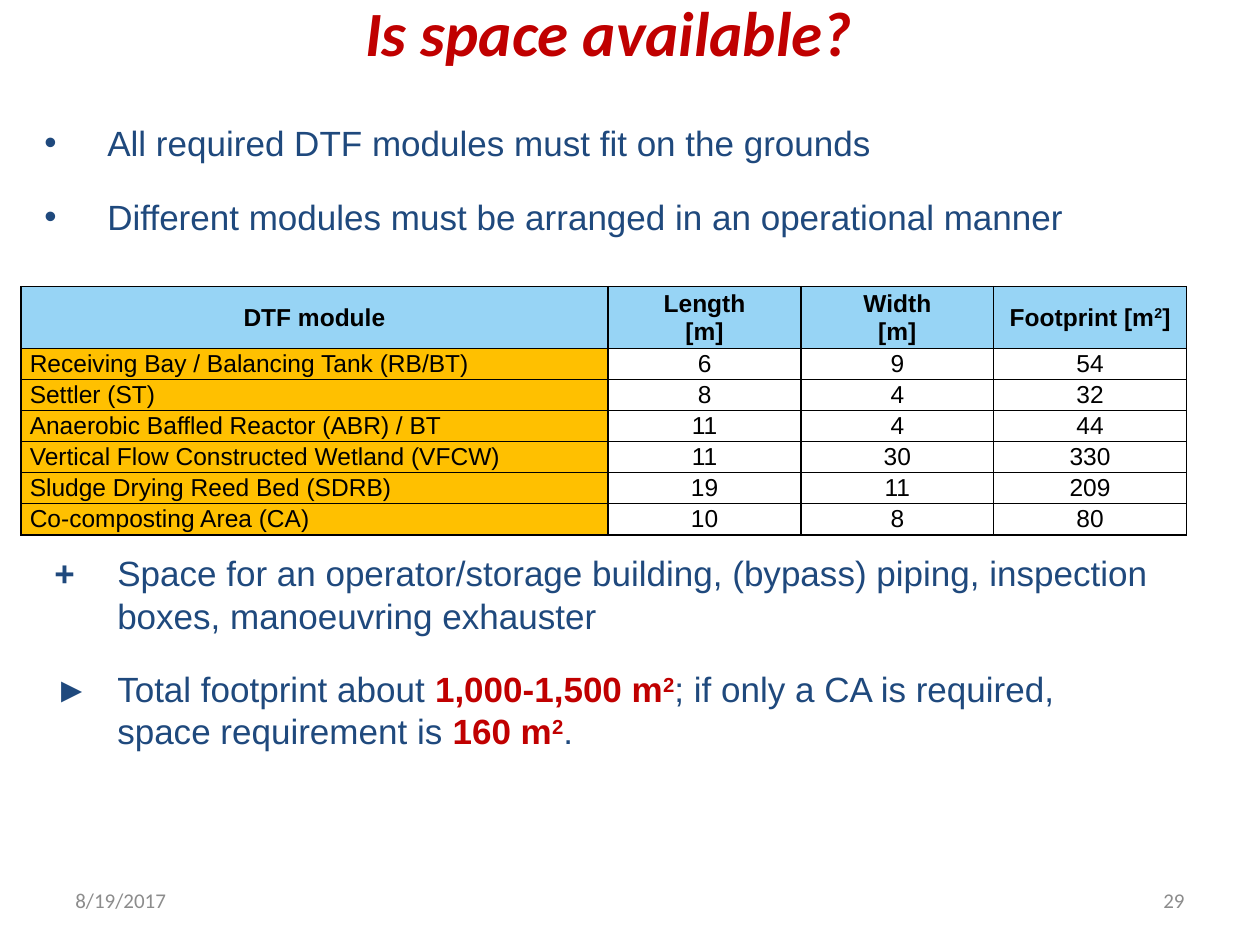
from lxml.etree import SubElement
from pptx import Presentation
from pptx.dml.color import RGBColor
from pptx.enum.text import MSO_ANCHOR, MSO_AUTO_SIZE, PP_ALIGN
from pptx.oxml import parse_xml
from pptx.oxml.ns import nsdecls, qn
from pptx.util import Cm, Pt

HUES = {"red": "C00000", "navy": "1F497D", "sky": "97D4F5",
        "gold": "FFC000", "black": "000000", "grey": "8C8C8C"}

HEAD = ["DTF module", "Length\v[m]", "Width\v[m]", "Footprint [m²]"]
ROWS = [
    ("Receiving Bay / Balancing Tank (RB/BT)", 6, 9, 54),
    ("Settler (ST)", 8, 4, 32),
    ("Anaerobic Baffled Reactor (ABR) / BT", 11, 4, 44),
    ("Vertical Flow Constructed Wetland (VFCW)", 11, 30, 330),
    ("Sludge Drying Reed Bed (SDRB)", 19, 11, 209),
    ("Co-composting Area (CA)", 10, 8, 80),
]
# Each item is a list of (text, style) parts.
NEEDS = [
    [("All required DTF modules must fit on the grounds", "")],
    [("Different modules must be arranged in an operational manner", "")],
]
SUMS = [
    [("+\t", "bold"),
     ("Space for an operator/storage building, (bypass) piping, "
      "inspection boxes, manoeuvring exhauster", "")],
    [("►\tTotal footprint about ", ""), ("1,000-1,500 m", "key"),
     ("2", "key sup"),
     ("; if only a CA is required, space requirement is ", ""),
     ("160 m", "key"), ("2", "key sup"), (".", "")],
]


def hue(name):
    return RGBColor.from_string(HUES[name])


def style(font, face, size, color, bold=False):
    font.name, font.size, font.bold = face, Pt(size), bold
    font.color.rgb = hue(color)


def raise_run(run):
    run.font._element.set("baseline", "30000")


def place(shape, box):
    shape.left, shape.top, shape.width, shape.height = map(Cm, box)


def add_title(slide, box):
    title = slide.shapes.title
    place(title, box)
    frame = title.text_frame
    frame.text = "Is space available?"
    frame.vertical_anchor = MSO_ANCHOR.MIDDLE
    para = frame.paragraphs[0]
    para.alignment = PP_ALIGN.CENTER
    style(para.font, "Calibri", 36, "red", True)
    para.font.italic = True


def add_list(body, box, items, mark=None):
    """Fill a body placeholder with hanging items, bulleted if mark is set."""
    place(body, box)
    frame = body.text_frame
    frame.auto_size = MSO_AUTO_SIZE.NONE
    for i, parts in enumerate(items):
        para = frame.add_paragraph() if i else frame.paragraphs[0]
        para.space_before, para.space_after = Pt(0), Pt(18)
        props = para._p.get_or_add_pPr()
        props.set("marL", str(Cm(1.27)))
        props.set("indent", str(Cm(-1.27)))
        if mark:
            SubElement(props, qn("a:buFont"), typeface="Arial")
            SubElement(props, qn("a:buChar"), char=mark)
        else:
            SubElement(props, qn("a:buNone"))
        style(para.font, "Arial", 20, "navy")
        for text, kind in parts:
            run = para.add_run()
            run.text = text
            if kind:
                run.font.bold = True
            if "key" in kind:
                run.font.color.rgb = hue("red")
            if "sup" in kind:
                raise_run(run)


def add_edges(cell):
    props = cell._tc.get_or_add_tcPr()
    for i, side in enumerate("LRTB"):
        props.insert(i, parse_xml(
            f'<a:ln{side} {nsdecls("a")} w="12700"><a:solidFill>'
            f'<a:srgbClr val="{HUES["black"]}"/></a:solidFill></a:ln{side}>'))


def fill_cell(cell, text, fill, bold, center):
    cell.margin_left = cell.margin_right = Cm(0.18)
    cell.margin_top = cell.margin_bottom = 0
    cell.vertical_anchor = MSO_ANCHOR.MIDDLE
    if fill:
        cell.fill.solid()
        cell.fill.fore_color.rgb = hue(fill)
    else:
        cell.fill.background()
    add_edges(cell)
    para = cell.text_frame.paragraphs[0]
    para.alignment = PP_ALIGN.CENTER if center else PP_ALIGN.LEFT
    style(para.font, "Arial", 14, "black", bold)
    start, square, end = text.partition("²")
    para.text = start
    if square:
        power, rest = para.add_run(), para.add_run()
        power.text, rest.text = "2", end
        raise_run(power)


def add_sizes(slide, box):
    """Add the table of module sizes; the first column takes half the width."""
    left, top, width, height = box
    grid = [HEAD, *ROWS]
    table = slide.shapes.add_table(len(grid), len(HEAD), *map(Cm, box)).table
    table.first_row = table.horz_banding = False
    first = 11.84
    for c, col in enumerate(table.columns):
        col.width = Cm((width - first) / 3 if c else first)
    unit = height / (len(grid) + 1)
    for r, row in enumerate(grid):
        table.rows[r].height = Cm(unit if r else 2 * unit)
        for c, value in enumerate(row):
            fill = "sky" if r == 0 else "gold" if c == 0 else None
            fill_cell(table.cell(r, c), str(value), fill, r == 0,
                      r == 0 or c > 0)


def add_foot(slide, box):
    """Put the date at the left end of the box and the number at the right."""
    left, top, width, height = box
    part = 5.93
    for text, x, side in (("8/19/2017", left, PP_ALIGN.LEFT),
                          ("29", left + width - part, PP_ALIGN.RIGHT)):
        note = slide.shapes.add_textbox(*map(Cm, (x, top, part, height)))
        frame = note.text_frame
        frame.word_wrap = True
        frame.vertical_anchor = MSO_ANCHOR.MIDDLE
        para = frame.paragraphs[0]
        para.text, para.alignment = text, side
        style(para.font, "Calibri", 12, "grey")


def main():
    deck = Presentation()
    deck.slide_width, deck.slide_height = Cm(25.4), Cm(19.05)
    slide = deck.slides.add_slide(deck.slide_layouts[3])
    add_title(slide, (0.84, -0.43, 22.86, 2.11))
    add_list(slide.placeholders[1], (0.64, 2.33, 23.07, 2.61), NEEDS, "•")
    add_sizes(slide, (0.42, 5.78, 23.5, 5))
    add_list(slide.placeholders[2], (0.84, 11, 22.65, 4.32), SUMS)
    add_foot(slide, (1.27, 17.65, 22.86, 1.01))
    deck.save("out.pptx")


if __name__ == "__main__":
    main()
